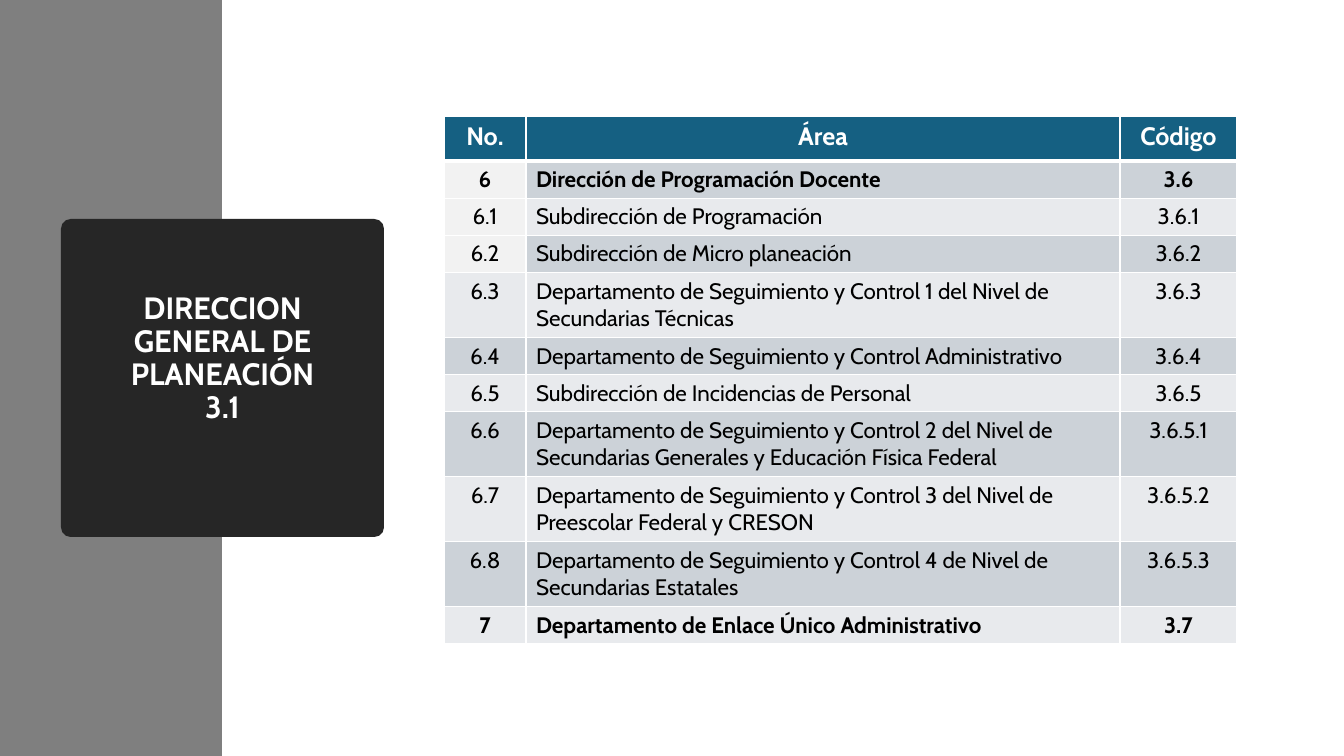
from dataclasses import dataclass

from lxml import etree
from pptx import Presentation
from pptx.dml.color import RGBColor
from pptx.enum.shapes import MSO_SHAPE
from pptx.enum.text import MSO_ANCHOR, PP_ALIGN
from pptx.oxml.ns import qn
from pptx.util import Emu, Pt

RECTANGLE = MSO_SHAPE.RECTANGLE
ROUNDED = MSO_SHAPE.ROUNDED_RECTANGLE
CENTER, LEFT = PP_ALIGN.CENTER, PP_ALIGN.LEFT
MIDDLE = MSO_ANCHOR.MIDDLE
EMU_PER_PX = 914400 / 100.8


@dataclass(frozen=True)
class Theme:
    font: str = "Cabin"
    white: str = "FFFFFF"
    black: str = "000000"
    band: str = "7F7F7F"
    title_box: str = "262626"
    header: str = "156082"
    row_dark: str = "CCD2D8"
    row_light: str = "E8EAED"
    number_light: str = "F2F2F2"
    title_size: int = 22
    header_size: int = 18
    body_size: int = 16
    border: int = 1
    header_border: int = 3


@dataclass(frozen=True)
class Area:
    number: str
    name: str
    code: str
    lines: int = 1
    bold: bool = False


THEME = Theme()
HEADINGS = ("No.", "Área", "Código")
AREAS = (
    Area("6", "Dirección de Programación Docente", "3.6", bold=True),
    Area("6.1", "Subdirección de Programación", "3.6.1"),
    Area("6.2", "Subdirección de Micro planeación", "3.6.2"),
    Area("6.3", "Departamento de Seguimiento y Control 1 del Nivel de Secundarias Técnicas", "3.6.3", 2),
    Area("6.4", "Departamento de Seguimiento y Control Administrativo", "3.6.4"),
    Area("6.5", "Subdirección de Incidencias de Personal", "3.6.5"),
    Area("6.6", "Departamento de Seguimiento y Control 2 del Nivel de "
         "Secundarias Generales y Educación Física Federal", "3.6.5.1", 2),
    Area("6.7", "Departamento de Seguimiento y Control 3 del Nivel de Preescolar Federal y CRESON", "3.6.5.2", 2),
    Area("6.8", "Departamento de Seguimiento y Control 4 de Nivel de Secundarias Estatales", "3.6.5.3", 2),
    Area("7", "Departamento de Enlace Único Administrativo", "3.7", bold=True),
)
COLUMN_WIDTHS = (82, 594, 117)
HEADER_HEIGHT = 45
ROW_HEIGHTS = {1: 37, 2: 65}
PALE_NUMBER_ROWS = 3


def px(length: int) -> Emu:
    return Emu(round(length * EMU_PER_PX))


def write_text(frame, text: str, *, size: int, color: str, bold: bool = False,
               align=CENTER, spacing: float = 1.0) -> None:
    frame.text = text
    for paragraph in frame.paragraphs:
        paragraph.alignment = align
        paragraph.line_spacing = spacing
        for run in paragraph.runs:
            run.font.name = THEME.font
            run.font.size = Pt(size)
            run.font.bold = bold
            run.font.color.rgb = RGBColor.from_string(color)


def add_block(slide, kind, left: int, top: int, width: int, height: int, color: str):
    shape = slide.shapes.add_shape(kind, px(left), px(top), px(width), px(height))
    shape.shadow.inherit = False
    shape.fill.solid()
    shape.fill.fore_color.rgb = RGBColor.from_string(color)
    shape.line.fill.background()
    return shape


def set_borders(cell, top: int, bottom: int) -> None:
    properties = cell._tc.get_or_add_tcPr()
    widths = {"lnL": THEME.border, "lnR": THEME.border, "lnT": top, "lnB": bottom}
    for side, width in widths.items():
        line = etree.SubElement(properties, qn(f"a:{side}"), w=str(Pt(width)))
        fill = etree.SubElement(line, qn("a:solidFill"))
        etree.SubElement(fill, qn("a:srgbClr"), val=THEME.white)


def format_cell(cell, text: str, fill: str, *, top: int = THEME.border,
                bottom: int = THEME.border, **text_format) -> None:
    set_borders(cell, top, bottom)
    cell.fill.solid()
    cell.fill.fore_color.rgb = RGBColor.from_string(fill)
    write_text(cell.text_frame, text, **text_format)


def add_area_table(slide, left: int, top: int) -> None:
    heights = [HEADER_HEIGHT] + [ROW_HEIGHTS[area.lines] for area in AREAS]
    table = slide.shapes.add_table(len(heights), len(COLUMN_WIDTHS), px(left), px(top),
                                   px(sum(COLUMN_WIDTHS)), px(sum(heights))).table
    table.horz_banding = False
    for column, width in zip(table.columns, COLUMN_WIDTHS):
        column.width = px(width)
    for row, height in zip(table.rows, heights):
        row.height = px(height)

    # Header row
    for column, heading in enumerate(HEADINGS):
        format_cell(table.cell(0, column), heading, THEME.header, bottom=THEME.header_border,
                    size=THEME.header_size, color=THEME.white, bold=True)

    # Area rows in alternating bands
    for row, area in enumerate(AREAS, start=1):
        band = THEME.row_dark if row % 2 else THEME.row_light
        number_fill = THEME.number_light if row <= PALE_NUMBER_ROWS else band
        top_border = THEME.header_border if row == 1 else THEME.border
        cells = ((area.number, number_fill, CENTER), (area.name, band, LEFT), (area.code, band, CENTER))
        for column, (text, fill, align) in enumerate(cells):
            format_cell(table.cell(row, column), text, fill, top=top_border,
                        size=THEME.body_size, color=THEME.black, bold=area.bold, align=align)


def add_title(slide) -> None:
    box = add_block(slide, ROUNDED, 61, 219, 323, 318, THEME.title_box)
    box.adjustments[0] = 0.03
    frame = box.text_frame
    frame.word_wrap = True
    frame.vertical_anchor = MIDDLE
    frame.margin_left = frame.margin_right = px(64)
    frame.margin_top, frame.margin_bottom = px(5), px(43)
    write_text(frame, "DIRECCION GENERAL DE PLANEACIÓN\v3.1", size=THEME.title_size,
               color=THEME.white, bold=True, spacing=0.9)


def main() -> None:
    presentation = Presentation()
    presentation.slide_width, presentation.slide_height = px(1344), px(756)
    slide = presentation.slides.add_slide(presentation.slide_layouts[6])

    # Side band and title
    add_block(slide, RECTANGLE, 0, 0, 222, 756, THEME.band)
    add_title(slide)

    # Table of areas
    add_area_table(slide, 444, 116)
    presentation.save("out.pptx")


if __name__ == "__main__":
    main()
